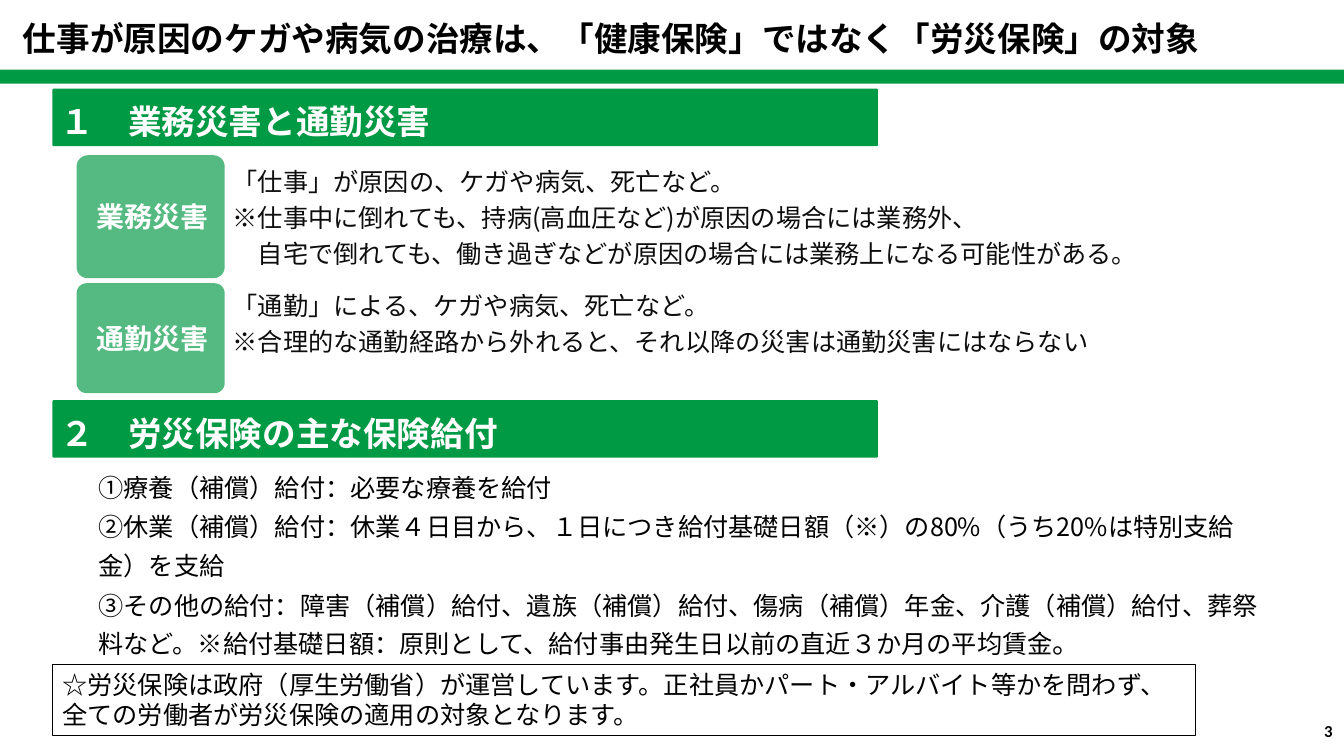
from dataclasses import dataclass
from typing import Optional

from lxml.etree import SubElement
from pptx import Presentation
from pptx.dml.color import RGBColor
from pptx.enum.shapes import MSO_SHAPE
from pptx.enum.text import MSO_ANCHOR, PP_ALIGN
from pptx.oxml.ns import qn
from pptx.util import Pt

COLORS = {"green": "009944", "black": "000000", "ink": "0D0D0D", "white": "FFFFFF"}
CJK = "Noto Sans CJK JP"
PLAIN = (7.2, 3.6, 7.2, 3.6)
SNUG = (5.76, 2.88, 0, 2.88)
SIDES = ("margin_left", "margin_top", "margin_right", "margin_bottom")


@dataclass
class Box:
    left: float
    top: float
    width: float
    height: float
    lines: tuple[str, ...] = ()
    size: float = 18
    color: str = "black"
    bold: bool = False
    font: str = CJK
    fill: Optional[str] = None
    alpha: Optional[int] = None
    line: Optional[str] = None
    round: Optional[float] = None
    pad: tuple[float, ...] = PLAIN
    middle: bool = False
    align: PP_ALIGN = PP_ALIGN.LEFT
    space: object = None
    hang: float = 0
    tail: str = ""


@dataclass
class Topic:
    top: float
    title: str


@dataclass
class Case:
    top: float
    height: float
    drop: float
    depth: float
    name: str
    lines: tuple[str, ...]


def paint(shape, box: Box) -> None:
    shape.shadow.inherit = False
    if box.round is not None:
        shape.adjustments[0] = box.round
    if box.fill:
        shape.fill.solid()
        shape.fill.fore_color.rgb = RGBColor.from_string(COLORS[box.fill])
    else:
        shape.fill.background()
    if box.alpha:
        tint = shape.element.spPr.find(qn("a:solidFill"))[0]
        SubElement(tint, qn("a:alpha"), val=str(box.alpha * 1000))
    if box.line:
        shape.line.color.rgb = RGBColor.from_string(COLORS[box.line])
        shape.line.width = Pt(0.75)
    else:
        shape.line.fill.background()


def add_run(para, text: str, size: float, box: Box) -> None:
    run = para.add_run()
    run.text = text
    run.font.color.rgb = RGBColor.from_string(COLORS[box.color])
    form = {"size": Pt(size), "bold": box.bold, "name": box.font}
    for key, value in form.items():
        setattr(run.font, key, value)
    SubElement(run.font._element, qn("a:ea"), typeface=box.font)


def write(frame, box: Box) -> None:
    form = {
        "word_wrap": True,
        "vertical_anchor": MSO_ANCHOR.MIDDLE if box.middle else MSO_ANCHOR.TOP,
        **{side: Pt(pad) for side, pad in zip(SIDES, box.pad)},
    }
    for key, value in form.items():
        setattr(frame, key, value)
    for index, text in enumerate(box.lines):
        para = frame.add_paragraph() if index else frame.paragraphs[0]
        for key, value in {"alignment": box.align, "line_spacing": box.space}.items():
            setattr(para, key, value)
        if box.hang:
            props = para._p.get_or_add_pPr()
            props.set("marL", str(Pt(box.hang)))
            props.set("indent", str(Pt(-box.hang)))
        add_run(para, text, box.size, box)
    if box.tail:
        add_run(para, box.tail, 20, box)


def draw(slide, box: Box) -> None:
    place = [Pt(n) for n in (box.left, box.top, box.width, box.height)]
    kind = MSO_SHAPE.RECTANGLE if box.round is None else MSO_SHAPE.ROUNDED_RECTANGLE
    shape = slide.shapes.add_shape(kind, *place)
    paint(shape, box)
    write(shape.text_frame, box)


def label(slide, box: Box) -> None:
    place = [Pt(n) for n in (box.left, box.top, box.width, box.height)]
    write(slide.shapes.add_textbox(*place).text_frame, box)


def draw_topic(slide, topic: Topic) -> None:
    draw(slide, Box(37.44, topic.top, 589.68, 41.04, (topic.title,), 24, "white",
                    True, fill="green", round=0.026, pad=SNUG, middle=True,
                    space=1.2, hang=17.28))


def draw_case(slide, case: Case) -> None:
    draw(slide, Box(54.72, case.top, 105.84, case.height, (case.name,), 20, "white",
                    True, fill="green", alpha=67, round=0.091,
                    pad=(5.76, 2.88, 2.88, 2.88), middle=True, align=PP_ALIGN.CENTER))
    draw(slide, Box(159.84, case.drop, 717.12, case.depth, case.lines, 18, "ink",
                    round=0.026, pad=SNUG, space=1.2))


TITLE = Box(9.36, 9.36, 924.48, 36,
            ("仕事が原因のケガや病気の治療は、「健康保険」ではなく「労災保険」の対象",),
            24, bold=True)
RULE = Box(0, 49.68, 960, 10.08, fill="green")
GAINS = Box(66.24, 315.36, 838.8, 159.12, (
    "①療養（補償）給付：必要な療養を給付",
    "②休業（補償）給付：休業４日目から、１日につき給付基礎日額（※）の80%（うち20%は特別支給金）を支給",
    "③その他の給付：障害（補償）給付、遺族（補償）給付、傷病（補償）年金、介護（補償）給付、葬祭料など。"
    "※給付基礎日額：原則として、給付事由発生日以前の直近３か月の平均賃金",
), round=0.026, pad=(2.88, 14.4, 2.88, 3.6), space=Pt(28), tail="。")
NOTE = Box(37.44, 474.48, 816.48, 51.12, (
    "☆労災保険は政府（厚生労働省）が運営しています。正社員かパート・アルバイト等かを問わず、"
    "全ての労働者が労災保険の適用の対象となります。",
), line="black")
PAGE = Box(735.12, 507.6, 223.92, 28.8, ("3",), 12, bold=True, font="Calibri",
           middle=True, align=PP_ALIGN.RIGHT)
TOPICS = (
    Topic(63.36, "１　業務災害と通勤災害"),
    Topic(285.84, "２　労災保険の主な保険給付"),
)
CASES = (
    Case(202.32, 78.48, 199.44, 79.2, "通勤災害", (
        "「通勤」による、ケガや病気、死亡など。",
        "※合理的な通勤経路から外れると、それ以降の災害は通勤災害にはならない",
    )),
    Case(110.88, 87.84, 110.88, 88.56, "業務災害", (
        "「仕事」が原因の、ケガや病気、死亡など。",
        "※仕事中に倒れても、持病(高血圧など)が原因の場合には業務外、",
        "　自宅で倒れても、働き過ぎなどが原因の場合には業務上になる可能性がある。",
    )),
)


def main() -> None:
    deck = Presentation()
    deck.slide_width, deck.slide_height = Pt(960), Pt(540)
    slide = deck.slides.add_slide(deck.slide_layouts[6])
    draw(slide, GAINS)
    draw(slide, RULE)
    label(slide, TITLE)
    for topic in TOPICS:
        draw_topic(slide, topic)
    for case in CASES:
        draw_case(slide, case)
    draw(slide, NOTE)
    label(slide, PAGE)
    deck.save("out.pptx")


if __name__ == "__main__":
    main()
